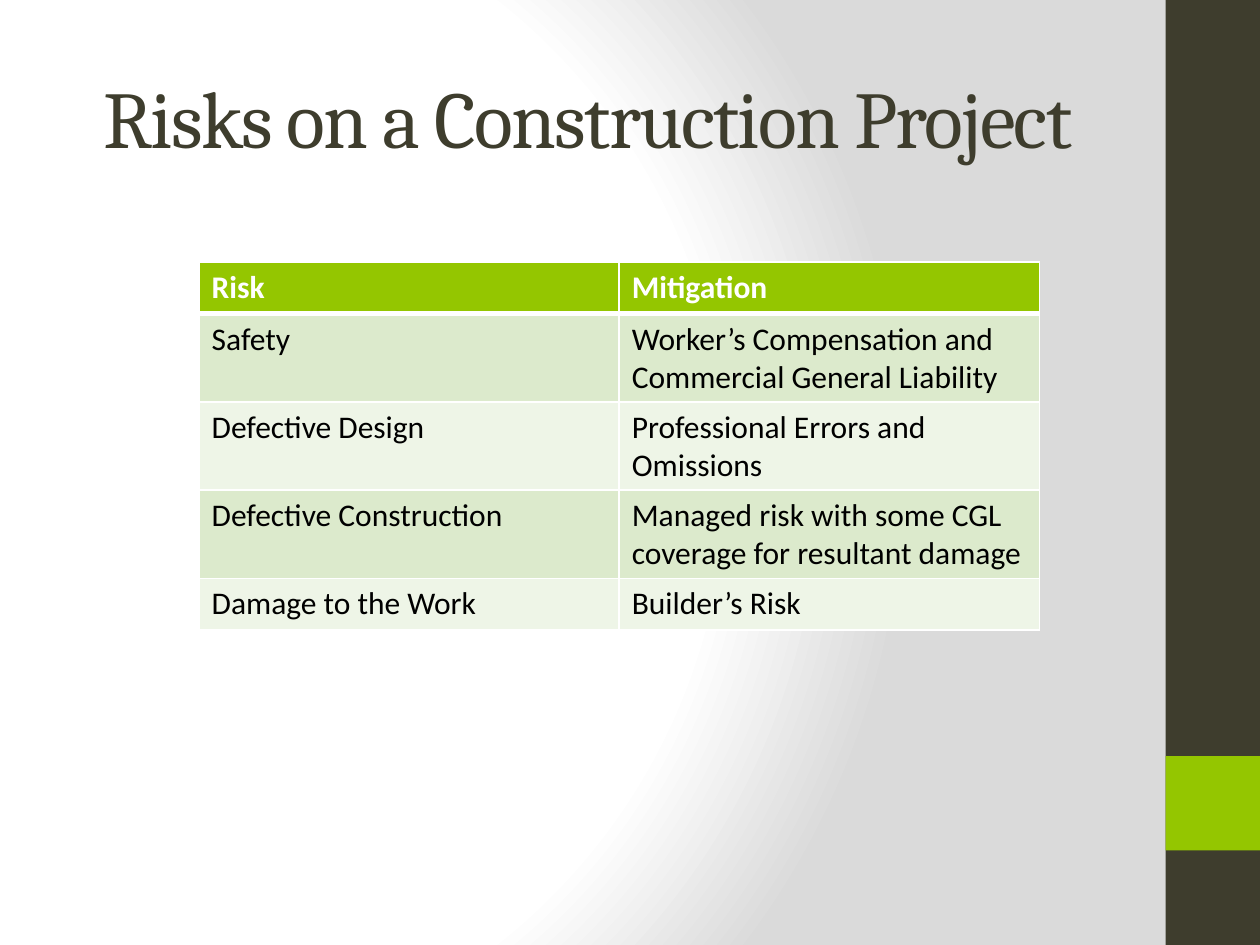
"""Build a slide with a table of construction project risks and mitigations."""
import pptx
import pptx.dml.color
import pptx.enum.shapes
import pptx.enum.text
import pptx.oxml
import pptx.oxml.ns
import pptx.util

Inches = pptx.util.Inches

TITLE = "Risks on a Construction Project"
RISKS = [
    ("Risk", "Mitigation"),
    ("Safety", "Worker’s Compensation and\nCommercial General Liability"),
    ("Defective Design", "Professional Errors and Omissions"),
    ("Defective Construction", "Managed risk with some CGL coverage for resultant damage"),
    ("Damage to the Work", "Builder’s Risk"),
]
COLORS = {
    "white": "FFFFFF",
    "gray": "DADADA",
    "dark": "3E3D2D",
    "green": "94C600",
    "odd": "DCEACC",
    "even": "EEF5E7",
    "black": "000000",
}
SIDEBAR = [("dark", 0, 7.5), ("green", 6, 0.75)]
BACKGROUND_STOPS = [(0, "white"), (75, "white"), (100, "gray")]
TITLE_FORMAT = {"name": "Cambria", "size": pptx.util.Pt(46)}
HEADER_FORMAT = {"name": "Calibri", "size": pptx.util.Pt(18), "bold": True}
BODY_FORMAT = {**HEADER_FORMAT, "bold": False}


def rgb(name):
    return pptx.dml.color.RGBColor.from_string(COLORS[name])


def paint(fill, name):
    fill.solid()
    fill.fore_color.rgb = rgb(name)


def write(paragraph, text, formats, color):
    paragraph.text = text
    for run in paragraph.runs:
        for attribute, value in formats.items():
            setattr(run.font, attribute, value)
        run.font.color.rgb = rgb(color)


def set_background(slide):
    slide.background.fill.gradient()
    old = next(slide.element.iter(pptx.oxml.ns.qn("a:gradFill")))
    stops = "".join(
        f'<a:gs pos="{position * 1000}"><a:srgbClr val="{COLORS[name]}"/></a:gs>'
        for position, name in BACKGROUND_STOPS
    )
    gradient = pptx.oxml.parse_xml(
        f'<a:gradFill {pptx.oxml.ns.nsdecls("a")} rotWithShape="1"><a:gsLst>{stops}</a:gsLst>'
        '<a:path path="circle"><a:fillToRect l="20000" t="50000" r="100000" b="50000"/></a:path>'
        "</a:gradFill>"
    )
    old.getparent().replace(old, gradient)


def add_sidebar(slide):
    for color, top, height in SIDEBAR:
        shape = slide.shapes.add_shape(
            pptx.enum.shapes.MSO_SHAPE.RECTANGLE,
            Inches(9.25), Inches(top), Inches(0.75), Inches(height),
        )
        shape.shadow.inherit = False
        paint(shape.fill, color)
        shape.line.fill.background()


def add_title(slide):
    box = slide.shapes.add_textbox(Inches(0.5), Inches(0.3), Inches(8.33), Inches(1.25))
    frame = box.text_frame
    frame.word_wrap = True
    frame.vertical_anchor = pptx.enum.text.MSO_ANCHOR.MIDDLE
    paragraph = frame.paragraphs[0]
    paragraph.alignment = pptx.enum.text.PP_ALIGN.CENTER
    write(paragraph, TITLE, TITLE_FORMAT, "dark")
    paragraph.runs[0].font._element.set("spc", "-100")


def set_borders(cell, widths):
    properties = cell._tc.get_or_add_tcPr()
    for index, (side, width) in enumerate(widths.items()):
        properties.insert(index, pptx.oxml.parse_xml(
            f'<a:{side} {pptx.oxml.ns.nsdecls("a")} w="{pptx.util.Pt(width)}">'
            f'<a:solidFill><a:srgbClr val="{COLORS["white"]}"/></a:solidFill></a:{side}>'
        ))


def add_risk_table(slide):
    table = slide.shapes.add_table(
        len(RISKS), len(RISKS[0]),
        Inches(1.58), Inches(2.08), Inches(6.67), Inches(0.41 * len(RISKS)),
    ).table
    for row, texts in enumerate(RISKS):
        header = row == 0
        fill = "green" if header else ("even", "odd")[row % 2]
        formats, color = (HEADER_FORMAT, "white") if header else (BODY_FORMAT, "black")
        widths = {"lnL": 1, "lnR": 1, "lnT": 3 if row == 1 else 1, "lnB": 3 if header else 1}
        for column, text in enumerate(texts):
            cell = table.cell(row, column)
            write(cell.text_frame.paragraphs[0], text, formats, color)
            paint(cell.fill, fill)
            set_borders(cell, widths)


def main():
    presentation = pptx.Presentation()
    presentation.slide_width = Inches(10)
    presentation.slide_height = Inches(7.5)
    slide = presentation.slides.add_slide(presentation.slide_layouts[6])
    set_background(slide)
    add_sidebar(slide)
    add_title(slide)
    add_risk_table(slide)
    presentation.save("out.pptx")


if __name__ == "__main__":
    main()
